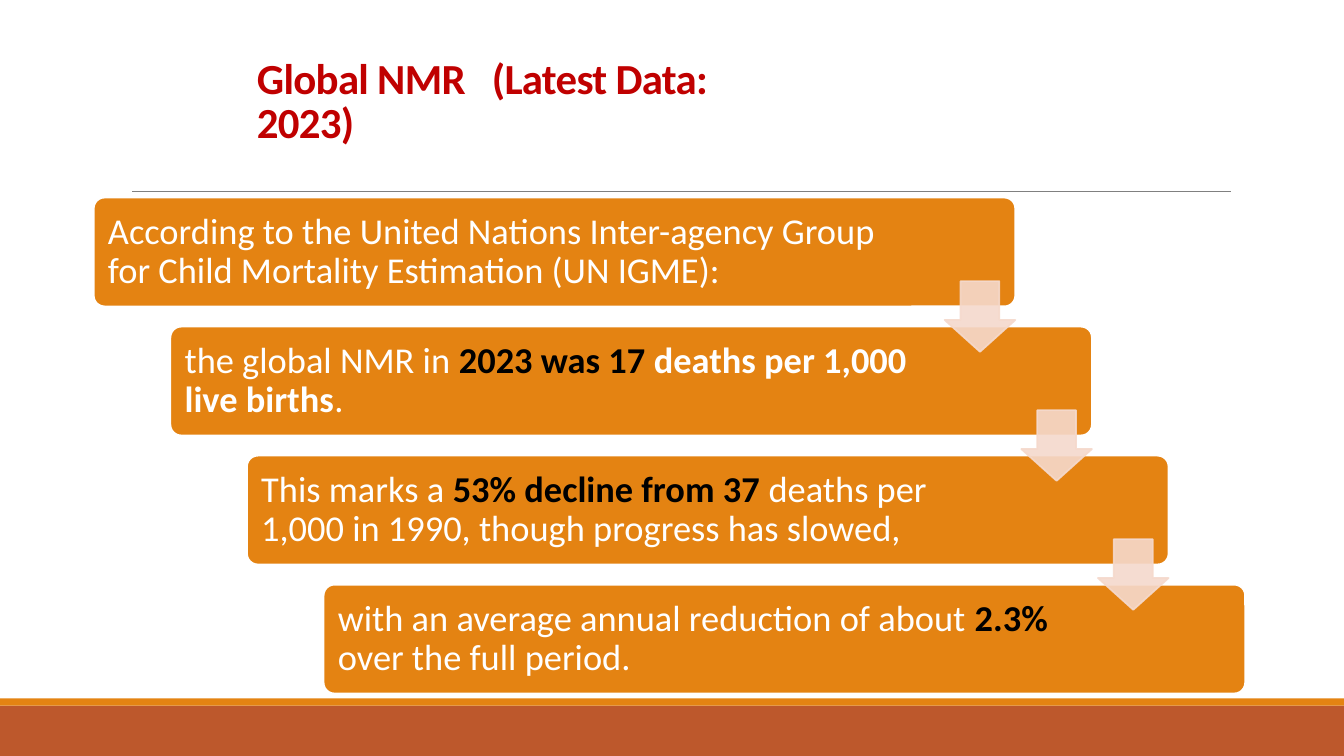
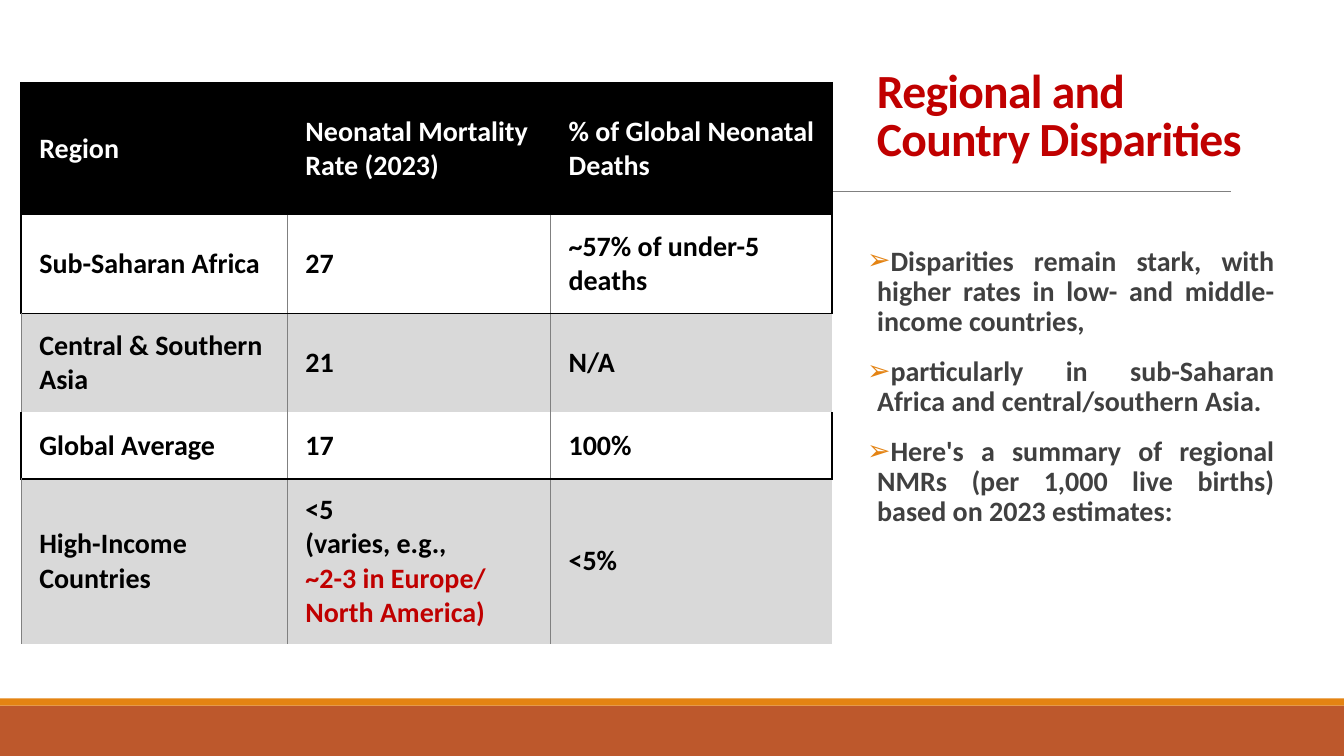
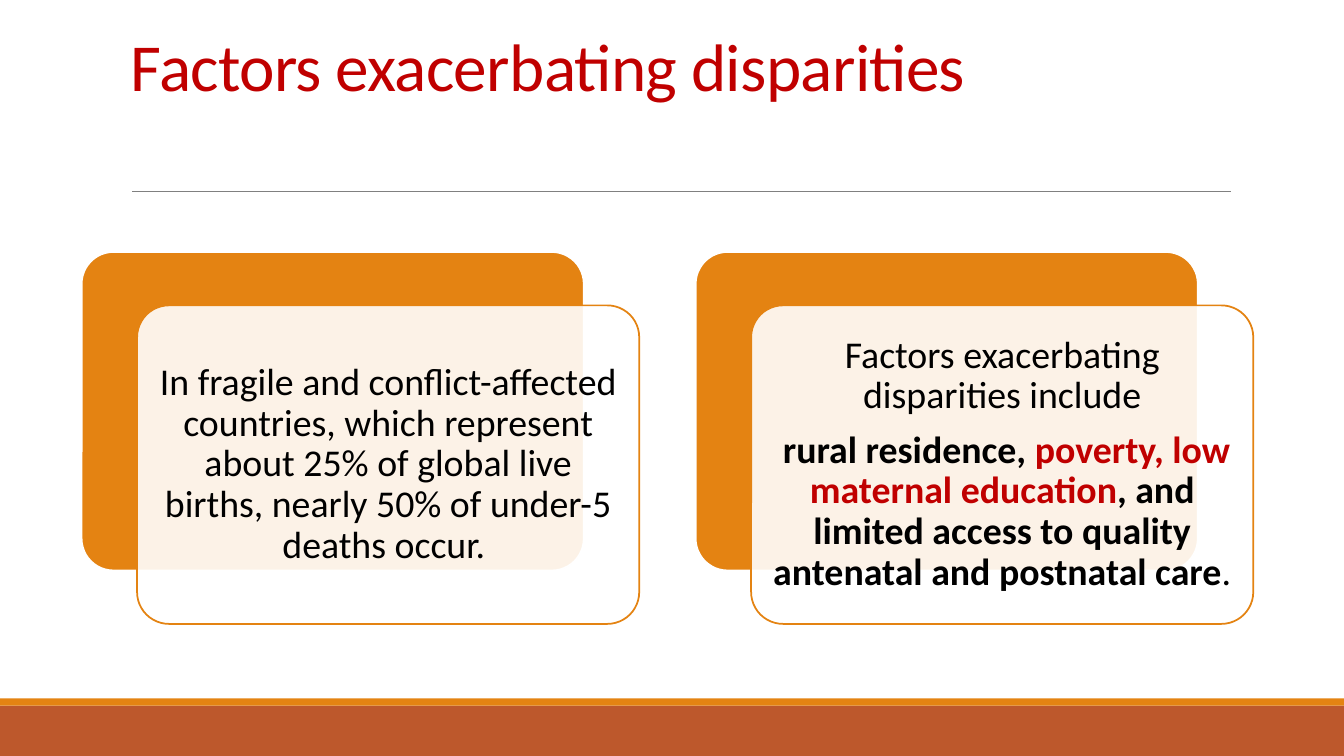
from dataclasses import dataclass

from lxml import etree
from pptx import Presentation
from pptx.dml.color import RGBColor
from pptx.enum.shapes import MSO_CONNECTOR, MSO_SHAPE
from pptx.enum.text import MSO_ANCHOR, PP_ALIGN
from pptx.oxml.ns import qn
from pptx.util import Inches, Pt

RECT = MSO_SHAPE.RECTANGLE
ROUNDED = MSO_SHAPE.ROUNDED_RECTANGLE
DOWN_ARROW = MSO_SHAPE.DOWN_ARROW
STRAIGHT = MSO_CONNECTOR.STRAIGHT
TOP, MIDDLE = MSO_ANCHOR.TOP, MSO_ANCHOR.MIDDLE
LEFT, CENTER, JUSTIFY = PP_ALIGN.LEFT, PP_ALIGN.CENTER, PP_ALIGN.JUSTIFY


@dataclass(frozen=True)
class Theme:
    font: str = "Calibri"
    orange: str = "E48312"
    rust: str = "BD582C"
    red: str = "C00000"
    pink: str = "F5D9CC"
    black: str = "000000"
    white: str = "FFFFFF"
    charcoal: str = "404040"
    gray: str = "808080"
    light_gray: str = "D9D9D9"
    step_size: float = 26
    card_size: float = 27
    body_size: float = 20
    outline: float = 1.25
    hairline: float = 0.5
    rule: float = 1.5


THEME = Theme()


@dataclass(frozen=True)
class Area:
    left: float
    top: float
    width: float
    height: float

    def lengths(self) -> tuple:
        return tuple(Inches(v) for v in (self.left, self.top, self.width, self.height))


@dataclass(frozen=True)
class Span:
    text: str
    color: str | None = None
    bold: bool | None = None


@dataclass(frozen=True)
class Style:
    size: float
    color: str
    bold: bool = False
    align: PP_ALIGN = LEFT
    spacing: float = 1.0
    before: float = 0
    after: float = 0
    tracking: int = 0
    bullet: str = ""


@dataclass(frozen=True)
class Step:
    spans: list[Span]
    right_inset: float = 1.58


Paras = list[list[Span]]


# Shared drawing helpers
def rgb(color: str) -> RGBColor:
    return RGBColor.from_string(color)


def add_bullet(para, mark: str) -> None:
    properties = para._p.get_or_add_pPr()
    properties.set("marL", str(Inches(0.1)))
    properties.set("indent", str(-Inches(0.1)))
    tint = etree.SubElement(properties, qn("a:buClr"))
    etree.SubElement(tint, qn("a:srgbClr"), val=THEME.orange)
    etree.SubElement(properties, qn("a:buFont"), typeface="Arial")
    etree.SubElement(properties, qn("a:buChar"), char=mark)


def write(frame, paras: Paras, style: Style) -> None:
    for index, spans in enumerate(paras):
        para = frame.paragraphs[0] if index == 0 else frame.add_paragraph()
        para.alignment = style.align
        para.line_spacing = style.spacing
        para.space_before = Pt(style.before)
        para.space_after = Pt(style.after)
        if style.bullet:
            add_bullet(para, style.bullet)
        para.font.name = THEME.font
        para.font.size = Pt(style.size)
        para.font.bold = style.bold
        para.font.color.rgb = rgb(style.color)
        for span in spans:
            run = para.add_run()
            run.text = span.text
            if span.color:
                run.font.color.rgb = rgb(span.color)
            if span.bold is not None:
                run.font.bold = span.bold
            if style.tracking:
                run._r.get_or_add_rPr().set("spc", str(style.tracking))


def set_frame(frame, anchor: MSO_ANCHOR, insets: tuple) -> None:
    frame.word_wrap = True
    frame.vertical_anchor = anchor
    (frame.margin_left, frame.margin_top,
     frame.margin_right, frame.margin_bottom) = (Inches(v) for v in insets)


def add_text(page, area: Area, paras: Paras, style: Style, insets: tuple) -> None:
    box = page.shapes.add_textbox(*area.lengths())
    set_frame(box.text_frame, TOP, insets)
    write(box.text_frame, paras, style)


def fade(parent, opacity: int) -> None:
    color = parent.find(qn("a:solidFill")).find(qn("a:srgbClr"))
    etree.SubElement(color, qn("a:alpha"), val=str(opacity * 1000))


def add_block(page, kind: MSO_SHAPE, area: Area, fill: str, line: str | None = None,
              adjust: tuple = (), opacity: int = 100):
    shape = page.shapes.add_shape(kind, *area.lengths())
    shape.shadow.inherit = False
    for index, value in enumerate(adjust):
        shape.adjustments[index] = value
    shape.fill.solid()
    shape.fill.fore_color.rgb = rgb(fill)
    if line:
        shape.line.color.rgb = rgb(line)
        shape.line.width = Pt(THEME.outline)
    else:
        shape.line.fill.background()
    if opacity < 100:
        fade(shape._element.spPr, opacity)
    return shape


def add_page(deck, title: str, area: Area, size: float, bold: bool = True):
    """Add a blank page with the bottom bands, the title rule and the title."""
    page = deck.slides.add_slide(deck.slide_layouts[6])
    add_block(page, RECT, Area(0, 7, 13.33, 0.5), THEME.rust)
    add_block(page, RECT, Area(0, 6.93, 13.33, 0.07), THEME.orange)
    rule = page.shapes.add_connector(
        STRAIGHT, Inches(1.31), Inches(1.9), Inches(12.21), Inches(1.9))
    rule.line.color.rgb = rgb(THEME.gray)
    rule.line.width = Pt(THEME.hairline)
    etree.SubElement(rule._element.spPr, qn("a:effectLst"))
    style = Style(size, THEME.red, bold, spacing=0.85, tracking=-50)
    add_text(page, area, [[Span(title)]], style, (0.1, 0.05, 0.1, 0.05))
    return page


# Slide 1: staircase of statements
STEPS = [
    Step([Span("According to the United Nations Inter-agency Group for Child "
               "Mortality Estimation (UN IGME):")], right_inset=1.31),
    Step([Span("the global NMR in "), Span("2023 was 17 ", THEME.black, True),
          Span("deaths per 1,000 live births", bold=True), Span(".")]),
    Step([Span("This marks a "), Span("53% decline from 37 ", THEME.black, True),
          Span("deaths per 1,000 in 1990, though progress has slowed,")]),
    Step([Span("with an average annual reduction of about "),
          Span("2.3% ", THEME.black, True), Span("over the full period.")]),
]


def build_global_rate(deck) -> None:
    page = add_page(deck, "Global NMR   (Latest Data: 2023)",
                    Area(2.45, 0.54, 5.61, 0.98), 30.6)
    style = Style(THEME.step_size, THEME.white, spacing=0.9, after=9)
    width, arrow_size = 9.14, 0.7
    corners = [(0.93 + 0.76 * i, 1.96 + 1.28 * i) for i in range(len(STEPS))]
    for (left, top), step in zip(corners, STEPS):
        block = add_block(page, ROUNDED, Area(left, top, width, 1.08),
                          THEME.orange, THEME.white, (0.1,))
        set_frame(block.text_frame, MIDDLE, (0.11, 0.11, step.right_inset, 0.11))
        write(block.text_frame, [step.spans], style)
    # Each arrow sits flush with the right edge of the step it leaves
    for left, top in corners[:-1]:
        area = Area(left + width - arrow_size, top + 0.83, arrow_size, arrow_size)
        arrow = add_block(page, DOWN_ARROW, area, THEME.pink, THEME.pink,
                          (0.55, 0.45), opacity=90)
        fade(arrow._element.spPr.find(qn("a:ln")), 90)


# Slide 2: regional table and summary
COLUMNS = [2.64, 2.61, 2.79]
ROWS = [1.31, 0.98, 0.98, 0.66, 1.64]
REGIONS = [
    ["Region", "Neonatal Mortality Rate (2023)", "% of Global Neonatal Deaths"],
    ["Sub-Saharan Africa", "27", "~57% of under-5 deaths"],
    ["Central & Southern Asia", "21", "N/A"],
    ["Global Average", "17", "100%"],
    ["High-Income Countries",
     [[Span("<5")], [Span("(varies, e.g.,")],
      [Span("~2-3 in Europe/ North America)", THEME.red)]],
     "<5%"],
]
SUMMARY = [
    "Disparities remain stark, with higher rates in low- and middle-income countries, ",
    "particularly in sub-Saharan Africa and central/southern Asia. ",
    "Here's a summary of regional NMRs (per 1,000 live births) based on 2023 estimates:",
]


def cell_borders(row: int, column: int) -> dict:
    """Give the (colour, width) of each cell side; None means no line."""
    strong, thin = (THEME.black, THEME.rule), (THEME.gray, THEME.hairline)
    if row == 0:
        return {"L": strong, "R": strong, "T": strong, "B": None}
    plain = row % 2 == 1
    first, last = column == 0, column == len(COLUMNS) - 1
    return {
        "L": strong if first and plain else thin,
        "R": (strong if plain else None) if last else thin,
        "T": None if plain else strong,
        "B": strong if plain else None,
    }


def draw_borders(cell, borders: dict) -> None:
    properties = cell._tc.get_or_add_tcPr()
    for index, (side, border) in enumerate(borders.items()):
        line = etree.Element(qn(f"a:ln{side}"))
        if border:
            color, width = border
            line.set("w", str(Pt(width)))
            fill = etree.SubElement(line, qn("a:solidFill"))
            etree.SubElement(fill, qn("a:srgbClr"), val=color)
        else:
            etree.SubElement(line, qn("a:noFill"))
        properties.insert(index, line)


def add_region_table(page) -> None:
    area = Area(0.21, 0.82, sum(COLUMNS), sum(ROWS))
    table = page.shapes.add_table(len(ROWS), len(COLUMNS), *area.lengths()).table
    table.first_row = table.horz_banding = False
    for column, width in zip(table.columns, COLUMNS):
        column.width = Inches(width)
    for r, (height, entries) in enumerate(zip(ROWS, REGIONS)):
        table.rows[r].height = Inches(height)
        style = Style(THEME.body_size, THEME.black if r else THEME.white, bold=True)
        for c, entry in enumerate(entries):
            cell = table.cell(r, c)
            cell.vertical_anchor = MIDDLE
            cell.margin_left = Inches(0.18)
            cell.margin_top = cell.margin_right = cell.margin_bottom = Inches(0.14)
            if r % 2:
                cell.fill.background()
            else:
                cell.fill.solid()
                cell.fill.fore_color.rgb = rgb(THEME.light_gray if r else THEME.black)
            draw_borders(cell, cell_borders(r, c))
            paras = [[Span(entry)]] if isinstance(entry, str) else entry
            write(cell.text_frame, paras, style)


def build_regions(deck) -> None:
    page = add_page(deck, "Regional and Country Disparities",
                    Area(8.6, 0.64, 4.04, 1.59), 34)
    style = Style(THEME.body_size, THEME.charcoal, bold=True, align=JUSTIFY,
                  spacing=0.9, before=12, after=2, bullet="➢")
    add_text(page, Area(8.6, 2.4, 4.04, 4.01), [[Span(text)] for text in SUMMARY],
             style, (0, 0.05, 0, 0.05))
    add_region_table(page)


# Slide 3: two layered cards
CARDS = [
    [[Span("In fragile and conflict-affected countries, which represent about 25% "
           "of global live births, nearly 50% of under-5 deaths occur. ")]],
    [[Span("Factors exacerbating disparities include")],
     [Span(" rural residence, ", bold=True),
      Span("poverty, low maternal education", THEME.red, True),
      Span(", and limited access to quality antenatal and postnatal care", bold=True),
      Span(". ")]],
]


def build_factors(deck) -> None:
    page = add_page(deck, "Factors exacerbating disparities",
                    Area(1.2, 0.31, 11, 1.59), 48, bold=False)
    style = Style(THEME.card_size, THEME.black, align=CENTER, spacing=0.9, after=9.5)
    for index, paras in enumerate(CARDS):
        left, top, width, height = 0.81 + 6.09 * index, 2.5, 4.98, 3.16
        add_block(page, ROUNDED, Area(left, top, width, height),
                  THEME.orange, THEME.white, (0.1,))
        card = add_block(page, ROUNDED, Area(left + 0.55, top + 0.53, width, height),
                         THEME.white, THEME.orange, (0.1,), opacity=90)
        set_frame(card.text_frame, MIDDLE, (0.11,) * 4)
        write(card.text_frame, paras, style)


def main() -> None:
    deck = Presentation()
    deck.slide_width, deck.slide_height = Inches(13.33), Inches(7.5)
    build_global_rate(deck)
    build_regions(deck)
    build_factors(deck)
    deck.save("out.pptx")


if __name__ == "__main__":
    main()
